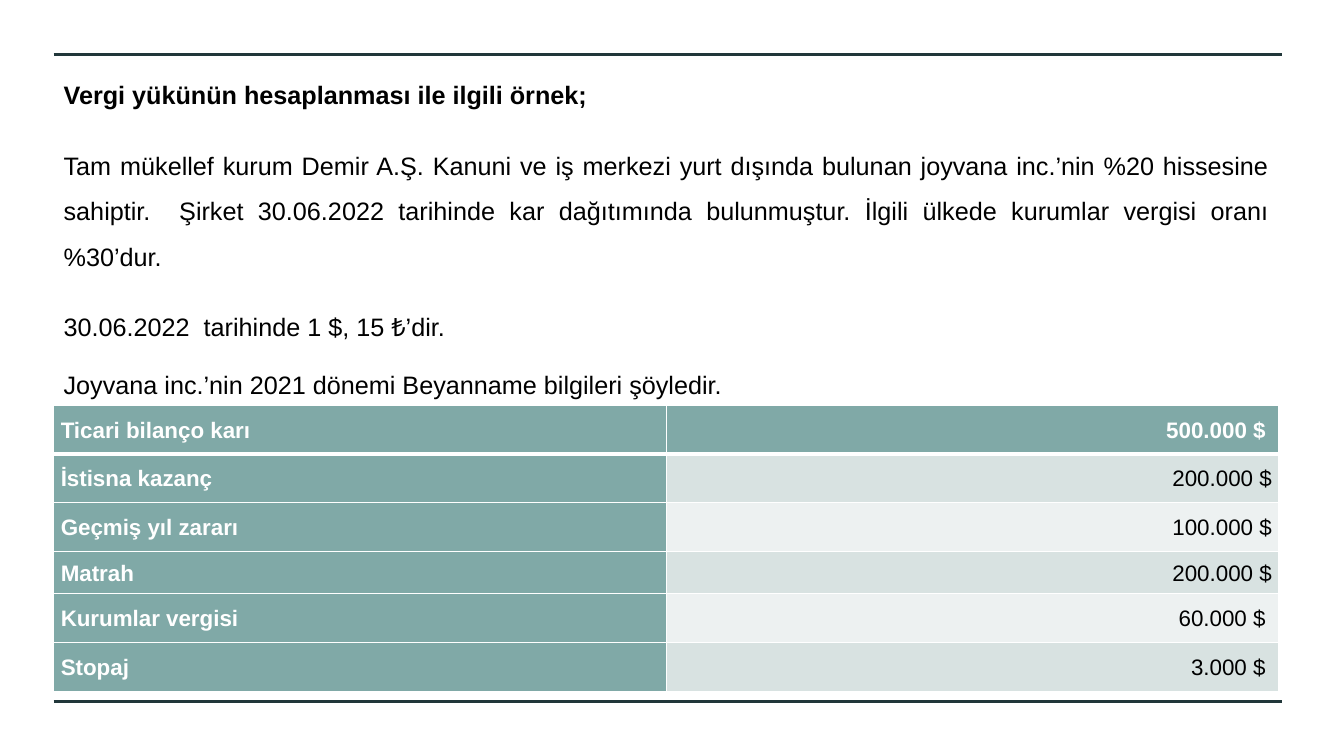
from dataclasses import dataclass

from lxml import etree
from pptx import Presentation
from pptx.dml.color import RGBColor
from pptx.enum.shapes import MSO_CONNECTOR
from pptx.enum.text import MSO_ANCHOR, PP_ALIGN
from pptx.oxml.ns import qn
from pptx.slide import Slide
from pptx.table import _Cell
from pptx.text.text import _Paragraph
from pptx.util import Pt

STRAIGHT = MSO_CONNECTOR.STRAIGHT
TOP, MIDDLE = MSO_ANCHOR.TOP, MSO_ANCHOR.MIDDLE
LEFT, RIGHT, JUSTIFY = PP_ALIGN.LEFT, PP_ALIGN.RIGHT, PP_ALIGN.JUSTIFY

FONT = "Arial"
BLACK, WHITE = "000000", "FFFFFF"
RULE_COLOUR, TEAL = "21373A", "80A9A7"
BANDS = ("EDF1F1", "D8E2E1")
MARGIN, CONTENT_WIDTH = 38.4, 875
RULE_RIGHT = 916


@dataclass(frozen=True)
class Passage:
    text: str
    line_spacing: float = 1.5
    bold: bool = False


@dataclass(frozen=True)
class Entry:
    label: str
    amount: str
    height: float = 34.9


PASSAGES = (
    Passage("Vergi yükünün hesaplanması ile ilgili örnek; ", bold=True),
    Passage(
        "Tam mükellef kurum Demir A.Ş. Kanuni ve iş merkezi yurt dışında bulunan "
        "joyvana inc.’nin %20 hissesine sahiptir.  Şirket 30.06.2022 tarihinde kar "
        "dağıtımında bulunmuştur. İlgili ülkede kurumlar vergisi oranı %30’dur."
    ),
    Passage("30.06.2022  tarihinde 1 $, 15 ₺’dir."),
    Passage("Joyvana inc.’nin 2021 dönemi Beyanname bilgileri şöyledir.", 1.07),
)

ENTRIES = (
    Entry("Ticari bilanço karı", "500.000 $ "),
    Entry("İstisna kazanç", "200.000 $"),
    Entry("Geçmiş yıl zararı", "100.000 $"),
    Entry("Matrah", "200.000 $", 30.2),
    Entry("Kurumlar vergisi", "60.000 $ "),
    Entry("Stopaj", "3.000 $ "),
)


def colour(value: str) -> RGBColor:
    return RGBColor.from_string(value)


def write(paragraph: _Paragraph, text: str, size: float, text_colour: str,
          bold: bool, align: PP_ALIGN, line_spacing: float) -> None:
    paragraph.text = text
    paragraph.alignment = align
    paragraph.line_spacing = line_spacing
    paragraph.space_after = Pt(8)
    for run in paragraph.runs:
        run.font.name = FONT
        run.font.size = Pt(size)
        run.font.bold = bold
        run.font.color.rgb = colour(text_colour)


def draw_rule(slide: Slide, y: float) -> None:
    rule = slide.shapes.add_connector(
        STRAIGHT, Pt(MARGIN), Pt(y), Pt(RULE_RIGHT), Pt(y))
    rule.line.color.rgb = colour(RULE_COLOUR)
    rule.line.width = Pt(2.25)
    etree.SubElement(rule._element.spPr, qn("a:effectLst"))


def draw_passages(slide: Slide) -> None:
    body = slide.shapes.add_textbox(
        Pt(MARGIN), Pt(42.5), Pt(CONTENT_WIDTH), Pt(457))
    frame = body.text_frame
    frame.word_wrap = True
    frame.vertical_anchor = TOP
    for index, passage in enumerate(PASSAGES):
        paragraph = frame.add_paragraph() if index else frame.paragraphs[0]
        write(paragraph, passage.text, 18, BLACK, passage.bold, JUSTIFY,
              passage.line_spacing)
        paragraph.space_before = Pt(10)


def set_borders(cell: _Cell, top: float, bottom: float) -> None:
    properties = cell._tc.get_or_add_tcPr()
    widths = {"a:lnL": 1, "a:lnR": 1, "a:lnT": top, "a:lnB": bottom}
    for position, (side, width) in enumerate(widths.items()):
        border = etree.Element(qn(side), w=str(Pt(width)))
        solid = etree.SubElement(border, qn("a:solidFill"))
        etree.SubElement(solid, qn("a:srgbClr"), val=WHITE)
        properties.insert(position, border)


def draw_entries(slide: Slide) -> None:
    height = sum(entry.height for entry in ENTRIES)
    table = slide.shapes.add_table(
        len(ENTRIES), 2, Pt(MARGIN), Pt(289.3), Pt(CONTENT_WIDTH), Pt(height)).table
    for column in table.columns:
        column.width = Pt(CONTENT_WIDTH / 2)
    for row, entry in enumerate(ENTRIES):
        table.rows[row].height = Pt(entry.height)
        for column, text in enumerate((entry.label, entry.amount)):
            heading = row == 0 or column == 0
            cell = table.cell(row, column)
            cell.vertical_anchor = MIDDLE
            cell.margin_left = cell.margin_right = Pt(5)
            cell.margin_top = cell.margin_bottom = Pt(0)
            cell.fill.solid()
            cell.fill.fore_color.rgb = colour(TEAL if heading else BANDS[row % 2])
            set_borders(cell, 3 if row == 1 else 1, 3 if row == 0 else 1)
            write(cell.text_frame.paragraphs[0], text, 16,
                  WHITE if heading else BLACK, heading,
                  RIGHT if column else LEFT, 1.07)


def main() -> None:
    presentation = Presentation()
    presentation.slide_width, presentation.slide_height = Pt(960), Pt(540)
    slide = presentation.slides.add_slide(presentation.slide_layouts[6])
    for y in (38.9, 501.1):
        draw_rule(slide, y)
    draw_passages(slide)
    draw_entries(slide)
    presentation.save("out.pptx")


if __name__ == "__main__":
    main()
